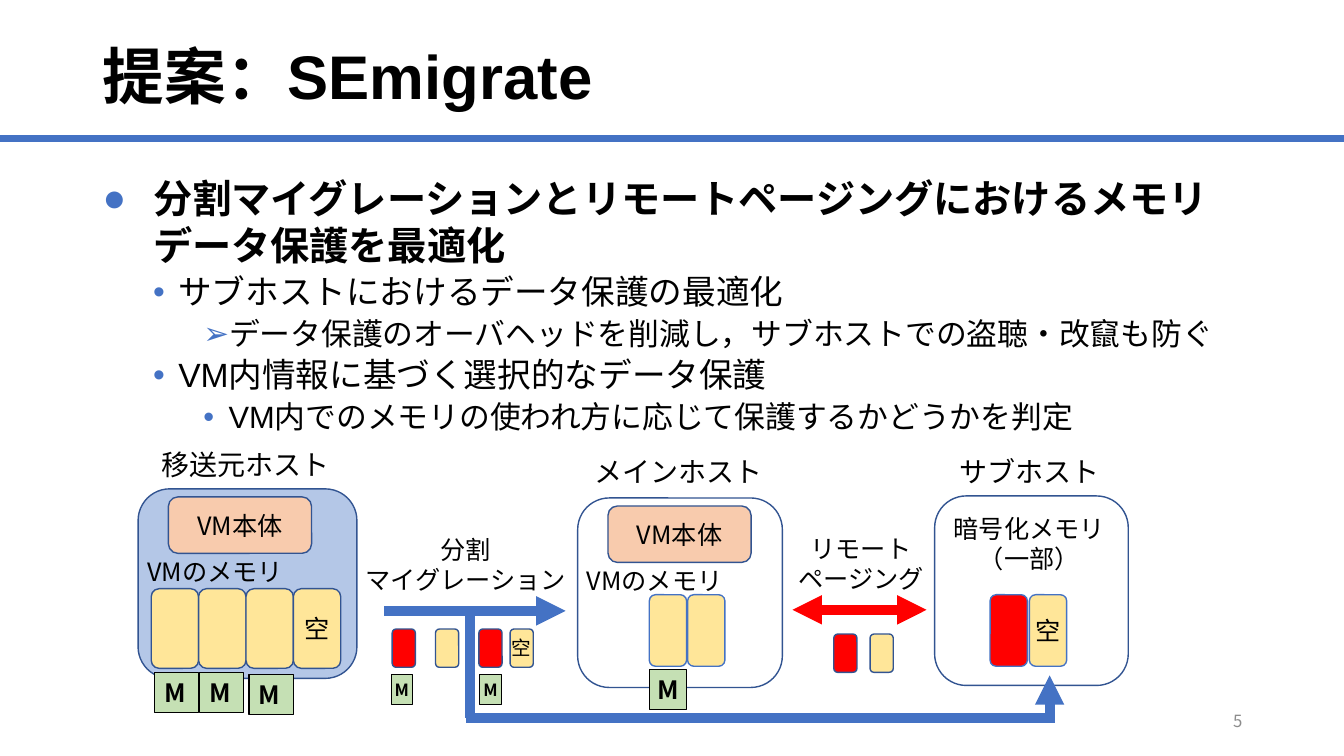
from lxml.etree import SubElement
from pptx import Presentation
from pptx.dml.color import RGBColor
from pptx.enum.shapes import MSO_CONNECTOR, MSO_SHAPE
from pptx.enum.text import MSO_ANCHOR, MSO_AUTO_SIZE, PP_ALIGN
from pptx.oxml.ns import qn
from pptx.util import Pt

PX = 9144  # 100 px to the inch
SANS = "Noto Sans CJK JP"
COLORS = {
    "black": "000000", "white": "FFFFFF", "grey": "8C8C8C", "blue": "4472C4",
    "navy": "325491", "pale": "B4C7E7", "red": "FF0000", "yellow": "FFE699",
    "orange": "F8CBAD", "green": "C5E0B4",
}
COLORS = {name: RGBColor.from_string(value) for name, value in COLORS.items()}
LEFT, CENTER, RIGHT = PP_ALIGN.LEFT, PP_ALIGN.CENTER, PP_ALIGN.RIGHT

deck = Presentation()
deck.slide_width, deck.slide_height = 1333 * PX, 750 * PX
page = deck.slides.add_slide(deck.slide_layouts[5])


def add_box(place, text="", size=18, fill=None, line="navy", weight=1, rounded=True,
            align=CENTER, anchor=MSO_ANCHOR.MIDDLE, wrap=True, grow=False,
            bold=False, color="black", font=SANS):
    """Add a filled shape, or a plain text box when fill is None."""
    place = [value * PX for value in place]
    if fill:
        kind = MSO_SHAPE.ROUNDED_RECTANGLE if rounded else MSO_SHAPE.RECTANGLE
        box = page.shapes.add_shape(kind, *place)
        box.shadow.inherit = False
        box.fill.solid()
        box.fill.fore_color.rgb = COLORS[fill]
        box.line.color.rgb = COLORS[line]
        box.line.width = Pt(weight)
    else:
        box = page.shapes.add_textbox(*place)
    frame = box.text_frame
    frame.word_wrap = wrap
    frame.vertical_anchor = anchor
    if fill and wrap:  # narrow shapes need their full width for the text
        frame.margin_left = frame.margin_right = 0
    if grow:
        frame.auto_size = MSO_AUTO_SIZE.SHAPE_TO_FIT_TEXT
    if text:
        frame.text = text
    for para in frame.paragraphs:
        para.alignment = align
        para.font.name, para.font.size, para.font.bold = font, Pt(size), bold
        para.font.color.rgb = COLORS[color]
    return box


def add_line(start, end, color, weight, ends=(), kind=MSO_CONNECTOR.STRAIGHT):
    points = [value * PX for value in (*start, *end)]
    connector = page.shapes.add_connector(kind, *points)
    connector.line.color.rgb = COLORS[color]
    connector.line.width = Pt(weight)
    outline = connector.line._get_or_add_ln()
    SubElement(outline, qn("a:miter"), lim="800000")
    for end_tag in ends:
        SubElement(outline, qn(end_tag), type="triangle")
    SubElement(connector._element.spPr, qn("a:effectLst"))
    return connector


# Title and rule
title = page.shapes.title
title.left, title.top, title.width, title.height = 92 * PX, 7 * PX, 1150 * PX, 144 * PX
title.text_frame.text = "提案：SEmigrate"
title.text_frame.auto_size = MSO_AUTO_SIZE.NONE
title.text_frame.vertical_anchor = MSO_ANCHOR.MIDDLE
para = title.text_frame.paragraphs[0]
para.alignment, para.line_spacing = LEFT, 0.9
para.font.name, para.font.size, para.font.bold = "Arial", Pt(44), True
para.font.color.rgb = COLORS["black"]
add_line((0, 137), (1333, 137), "blue", 5)

# Bulleted text: level, bullet, size, text
points = [
    (0, "●", 28, "分割マイグレーションとリモートページングにおけるメモリデータ保護を最適化"),
    (1, "•", 24, "サブホストにおけるデータ保護の最適化"),
    (2, "➢", 22, "データ保護のオーバヘッドを削減し，サブホストでの盗聴・改竄も防ぐ"),
    (1, "•", 24, "VM内情報に基づく選択的なデータ保護"),
    (2, "•", 22, "VM内でのメモリの使われ方に応じて保護するかどうかを判定"),
]
body = add_box((92, 168, 1150, 507), "\n".join(point[3] for point in points),
               align=LEFT, anchor=MSO_ANCHOR.TOP, font="Arial")
for para, (level, bullet, size, _) in zip(body.text_frame.paragraphs, points):
    para.level = level
    para.font.size, para.font.bold = Pt(size), level == 0
    para.space_before = Pt(5 if level else 10)
    para.line_spacing = 0.9 if level else 1.0
    properties = para._p.get_or_add_pPr()
    properties.set("marL", str((50, 75, 125)[level] * PX))
    properties.set("indent", str((-25 if level else -50) * PX))
    bullet_color = SubElement(properties, qn("a:buClr"))
    SubElement(bullet_color, qn("a:srgbClr"), val=str(COLORS["blue"]))
    SubElement(properties, qn("a:buFont"), typeface="Arial")
    SubElement(properties, qn("a:buChar"), char=bullet)
    properties.append(properties.find(qn("a:defRPr")))

# Hosts
for place, fill in [((137, 485, 217, 188), "pale"), ((573, 494, 203, 188), "white"),
                    ((927, 492, 192, 188), "white")]:
    add_box(place, fill=fill)
for left, top in [(167, 493), (603, 502)]:
    add_box((left, top, 142, 56), "VM本体", fill="orange")

# Labels
for place, text, size, align in [
    ((150, 439, 188, 44), "移送元ホスト", 20, LEFT),
    ((580, 446, 188, 44), "メインホスト", 20, LEFT),
    ((942, 446, 160, 44), "サブホスト", 20, LEFT),
    ((136, 547, 161, 40), "VMのメモリ", 18, LEFT),
    ((572, 556, 161, 40), "VMのメモリ", 18, LEFT),
    ((936, 504, 172, 71), "暗号化メモリ\n　（一部）", 18, LEFT),
    ((351, 525, 222, 71), "分割\nマイグレーション", 18, CENTER),
    ((781, 524, 146, 71), "リモート\nページング", 18, CENTER),
]:
    add_box(place, text, size, align=align, anchor=MSO_ANCHOR.TOP, wrap=False, grow=True)

# Arrows between the hosts
add_line((786, 605), (919, 605), "red", 7, ("a:headEnd", "a:tailEnd"))
add_line((466, 609), (466, 712), "blue", 7)
add_line((381, 606), (561, 606), "blue", 7, ("a:tailEnd",))
elbow = add_line((462, 712), (1041, 670), "blue", 7, ("a:tailEnd",), MSO_CONNECTOR.ELBOW)
elbow._element.spPr.find(qn("a:prstGeom")).set("prst", "bentConnector2")

# Memory pages in the hosts
for column in range(4):
    add_box((150 + 47 * column, 584, 47, 79), "空" if column == 3 else "", fill="yellow")
for left, fill, text in [(644, "yellow", ""), (682, "yellow", ""),
                         (982, "red", ""), (1021, "yellow", "空")]:
    add_box((left, 590, 37, 71), text, fill=fill, line="blue")

# Memory pages in transit
for left, top, fill, text in [
    (389, 624, "red", ""), (432, 624, "yellow", ""), (475, 624, "red", ""),
    (506, 624, "yellow", "空"), (827, 629, "red", ""), (863, 629, "yellow", ""),
]:
    add_box((left, top, 23, 38), text, 14, fill=fill, font="Calibri")

# M tags under the pages
for place, size, wrap in [
    ((153, 667, 44, 40), 18, False), ((198, 667, 44, 40), 18, False),
    ((247, 669, 44, 40), 18, False), ((644, 664, 37, 40), 18, True),
    ((388, 669, 21, 30), 12, True), ((476, 669, 21, 30), 12, True),
]:
    add_box(place, "M", size, fill="green", line="black", weight=0.75, rounded=False,
            align=CENTER if wrap else LEFT, anchor=MSO_ANCHOR.TOP, wrap=wrap,
            grow=True, bold=True)

# Page number
add_box((942, 695, 300, 40), "5", 12, align=RIGHT, color="grey")

# Japanese characters use the same typeface as the Latin ones
for shape in page.shapes:
    if shape.has_text_frame:
        for para in shape.text_frame.paragraphs:
            defaults = para._p.pPr.find(qn("a:defRPr"))
            SubElement(defaults, qn("a:ea"), typeface=para.font.name)

deck.save("out.pptx")
